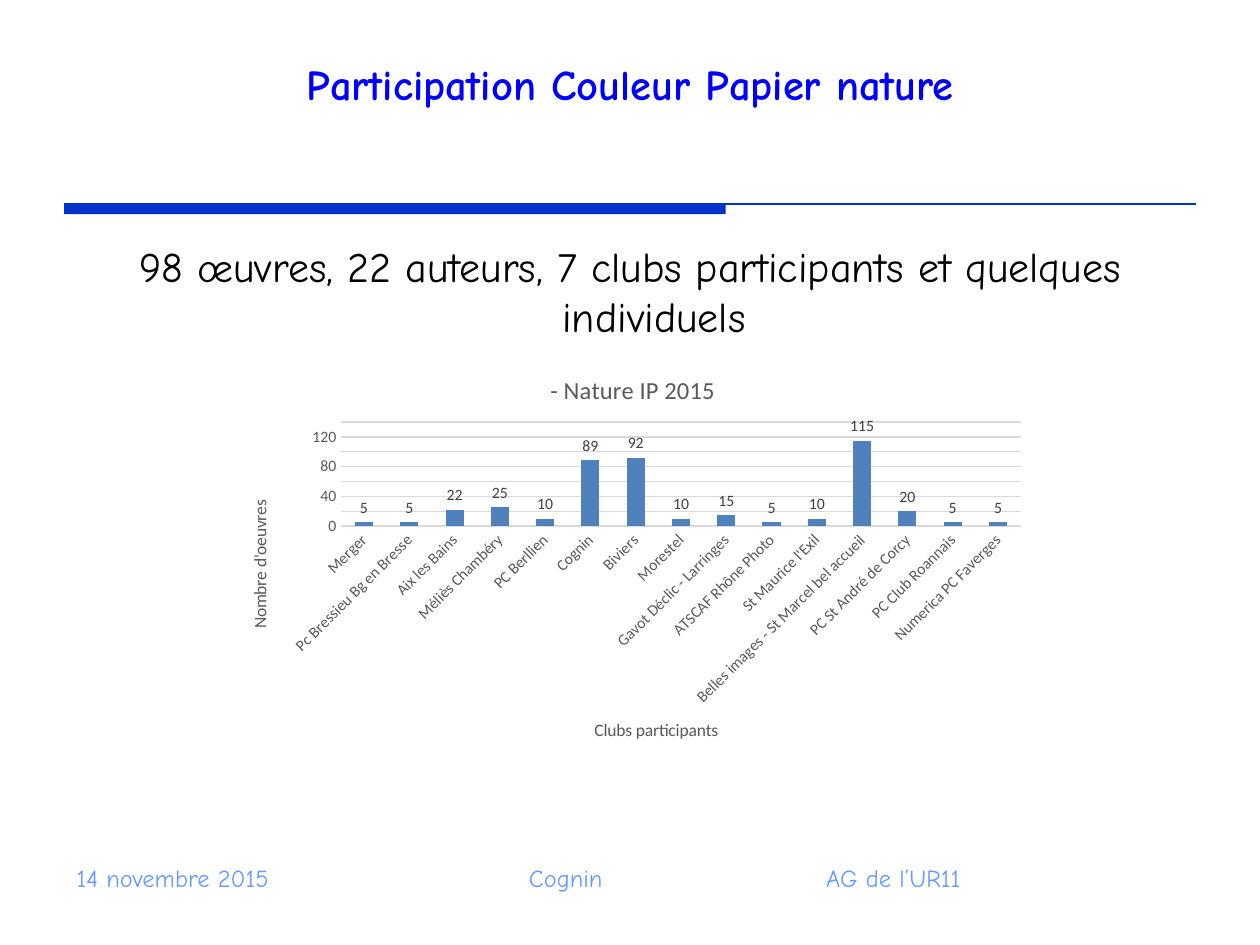
from lxml import etree
from pptx import Presentation
from pptx import util as u
from pptx.chart.data import CategoryChartData
from pptx.dml.color import RGBColor
from pptx.enum import chart as charts, shapes, text
from pptx.oxml.ns import qn

WIDTH, HEIGHT = 10, 7.5
MARGIN = 0.51
HAND, PLAIN = "Comic Neue", "Calibri"
RULE_BLUE, GREY = "0033CC", "595959"
CENTER = text.PP_ALIGN.CENTER


def style(font, name, size, color, bold=False):
    font.name, font.size, font.bold = name, u.Pt(size), bold
    font.color.rgb = RGBColor.from_string(color)


def add_text(words, left, top, width, height, size, color, bold=False, align=CENTER):
    """Add a wrapped one-paragraph text box, lengths in inches."""
    box = page.shapes.add_textbox(*map(u.Inches, (left, top, width, height)))
    box.text_frame.word_wrap = True
    box.text_frame.text = words
    para = box.text_frame.paragraphs[0]
    para.alignment = align
    style(para.runs[0].font, HAND, size, color, bold)
    return box


deck = Presentation()
deck.slide_width, deck.slide_height = u.Inches(WIDTH), u.Inches(HEIGHT)
page = deck.slides.add_slide(deck.slide_layouts[6])

# Two-weight rule under the title
rule_top = u.Inches(1.62)
bar = page.shapes.add_shape(shapes.MSO_SHAPE.RECTANGLE, u.Inches(MARGIN), rule_top,
                            u.Inches(5.25), u.Inches(0.08))
bar.shadow.inherit = False
bar.fill.solid()
bar.fill.fore_color.rgb = RGBColor.from_string(RULE_BLUE)
bar.line.fill.background()
rule = page.shapes.add_connector(shapes.MSO_CONNECTOR.STRAIGHT, u.Inches(MARGIN), rule_top,
                                 u.Inches(WIDTH - MARGIN), rule_top)
rule.line.color.rgb = RGBColor.from_string(RULE_BLUE)
rule.line.width = u.Pt(1.5)
etree.SubElement(rule._element.spPr, qn("a:effectLst"))

# Footer in three equal columns
footers = [("14 novembre 2015", text.PP_ALIGN.LEFT), ("Cognin", CENTER), ("AG de l’UR11", CENTER)]
for column, (words, align) in enumerate(footers):
    left = MARGIN + column * 2.68 + (0.08 if column == 1 else 0)
    add_text(words, left, 6.8, 2.44, 0.34, 14, "6699FF", align=align)

# Title and summary
title = add_text("Participation Couleur Papier nature", 0.69, 0.4, 8.62, 0.52,
                 24.3, "0000FF", bold=True)
title.text_frame.vertical_anchor = text.MSO_ANCHOR.MIDDLE
summary = add_text("98 œuvres, 22 auteurs, 7 clubs participants et quelques individuels",
                   0.69, 1.86, 8.62, 0.95, 24, "000000")
indent = summary.text_frame.paragraphs[0]._p.get_or_add_pPr()
indent.set("marL", str(u.Inches(0.38)))
indent.set("indent", str(-u.Inches(0.38)))

# Works per club
works = {
    "Merger": 5, "Pc Bressieu Bg en Bresse": 5, "Aix les Bains": 22,
    "Méliès Chambéry": 25, "PC Berllien": 10, "Cognin": 89, "Biviers": 92,
    "Morestel": 10, "Gavot Déclic - Larringes": 15, "ATSCAF Rhône Photo": 5,
    "St Maurice l'Exil": 10, "Belles images - St Marcel bel accueil": 115,
    "PC St André de Corcy": 20, "PC Club Roannais": 5, "Numerica PC Faverges": 5,
}
data = CategoryChartData()
data.categories = list(works)
data.add_series("Series 1", list(works.values()))
chart = page.shapes.add_chart(charts.XL_CHART_TYPE.COLUMN_CLUSTERED, u.Inches(1.77),
                              u.Inches(2.81), u.Inches(6.46), u.Inches(3.27), data).chart
style(chart.font, PLAIN, 10, "000000")
chart.has_legend = False
chart.has_title = True

titles = [(chart, " - Nature IP 2015", 14),
          (chart.category_axis, "Clubs participants", 10),
          (chart.value_axis, "Nombre d'oeuvres", 10)]
for owner, words, size in titles:
    frame = (owner.chart_title if owner is chart else owner.axis_title).text_frame
    frame.text = words
    style(frame.paragraphs[0].runs[0].font, PLAIN, size, GREY)

for axis in (chart.category_axis, chart.value_axis):
    axis.major_tick_mark = axis.minor_tick_mark = charts.XL_TICK_MARK.NONE
    axis.format.line.fill.background()
    style(axis.tick_labels.font, PLAIN, 9, GREY)
chart.category_axis._element.find(qn("c:txPr")).find(qn("a:bodyPr")).set("rot", str(-45 * 60000))

scale = chart.value_axis
scale.minimum_scale, scale.maximum_scale, scale.major_unit = 0, 140, 20
scale.has_major_gridlines = True
scale.major_gridlines.format.line.color.rgb = RGBColor.from_string("D9D9D9")
scale.major_gridlines.format.line.width = u.Pt(0.75)

plot = chart.plots[0]
plot.gap_width = 150
plot.vary_by_categories = False
plot.series[0].format.fill.solid()
plot.series[0].format.fill.fore_color.rgb = RGBColor.from_string("4F81BD")
plot.has_data_labels = True
labels = plot.data_labels
labels.show_value = True
labels.position = charts.XL_LABEL_POSITION.OUTSIDE_END
style(labels.font, PLAIN, 9, "404040")

deck.save("out.pptx")
